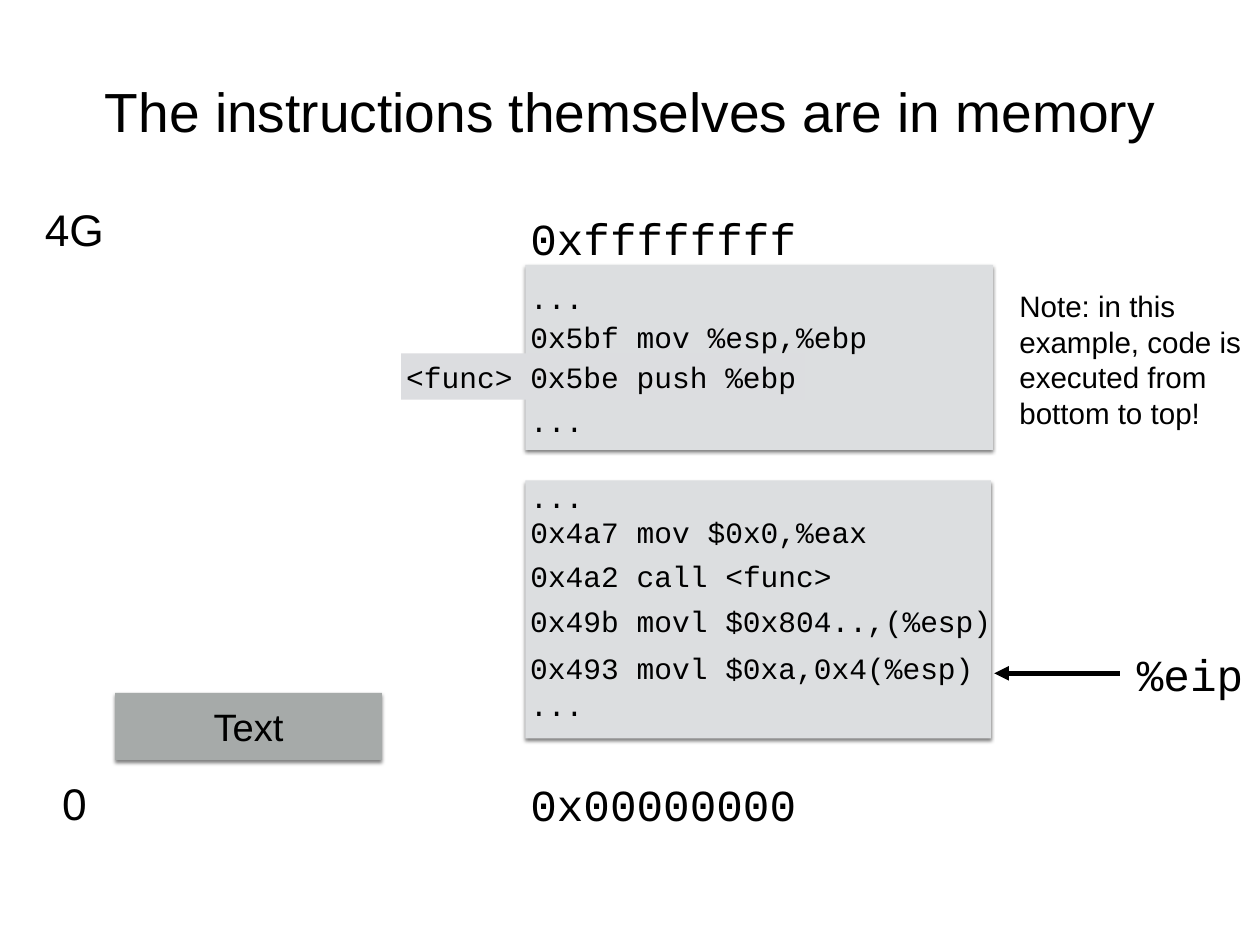
from pptx import Presentation
from pptx.dml.color import RGBColor as RGB
from pptx.enum.shapes import MSO_CONNECTOR as LINK, MSO_SHAPE as SHAPE
from pptx.enum.text import (MSO_ANCHOR as ANCHOR, MSO_AUTO_SIZE as FIT,
                            PP_ALIGN as ALIGN)
from pptx.oxml import parse_xml
from pptx.oxml.ns import nsdecls, qn
from pptx.util import Inches, Pt
from lxml.etree import SubElement

COLS, ROWS = 128, 96
WIDE, HIGH = Inches(14.22), Inches(10.67)
INK = {"text": "000000", "block": "DCDEE0", "func": "DCDDE0", "seg": "A6AAA9"}
SANS, MONO = "Arial", "Courier New"
PAD = Pt(4)
CODE = 53.37  # column where all code and addresses begin


def area(col, row, cols, rows):
    cell_w, cell_h = WIDE / COLS, HIGH / ROWS
    return [round(n) for n in
            (col * cell_w, row * cell_h, cols * cell_w, rows * cell_h)]


def write(shape, text, size, font, align=ALIGN.LEFT, pad=PAD, wrap=True,
          anchor=ANCHOR.MIDDLE):
    frame = shape.text_frame
    frame.text = text
    frame.word_wrap = wrap
    frame.auto_size = FIT.NONE if wrap else FIT.SHAPE_TO_FIT_TEXT
    frame.vertical_anchor = anchor
    frame.margin_left = frame.margin_right = pad
    frame.margin_top = frame.margin_bottom = pad
    for para in frame.paragraphs:
        para.alignment = align
        for run in para.runs:
            run.font.size = Pt(size)
            run.font.name = font
            run.font.color.rgb = RGB.from_string(INK["text"])


def add_box(slide, place, fill, shade=True):
    box = slide.shapes.add_shape(SHAPE.RECTANGLE, *area(*place))
    box.shadow.inherit = False
    box.fill.solid()
    box.fill.fore_color.rgb = RGB.from_string(INK[fill])
    box.line.fill.background()
    if shade:
        effects = box._element.spPr.find(qn("a:effectLst"))
        effects.append(parse_xml(
            f'<a:outerShdw {nsdecls("a")} blurRad="{Pt(3)}" dist="{Pt(2)}" '
            'dir="5400000" rotWithShape="0"><a:srgbClr val="000000">'
            '<a:alpha val="50000"/></a:srgbClr></a:outerShdw>'))
    return box


def add_text(slide, place, text, size, font, **style):
    box = slide.shapes.add_textbox(*area(*place))
    write(box, text, size, font, **style)


def mono_size(text, size):
    """Columns and rows that one line of fixed-width text takes up."""
    return len(text) * size * 0.075 + 1.1, size * 0.15 + 1


def add_code(slide, col, row, text, size=24):
    add_text(slide, (col, row, *mono_size(text, size)), text, size, MONO,
             wrap=False)


def add_block(slide, place, lines):
    add_box(slide, place, "block")
    for row, text in lines:
        add_code(slide, CODE, row, text)


def add_arrow(slide, start, end, row):
    x, y, span, _ = area(start, row, end - start, 0)
    arrow = slide.shapes.add_connector(LINK.STRAIGHT, x, y, x + span, y)
    arrow.line.width = Pt(4)
    arrow.line.color.rgb = RGB.from_string(INK["text"])
    SubElement(arrow.line._get_or_add_ln(), qn("a:headEnd"), type="triangle")
    SubElement(arrow._element.spPr, qn("a:effectLst"))


def main():
    deck = Presentation()
    deck.slide_width, deck.slide_height = WIDE, HIGH
    slide = deck.slides.add_slide(deck.slide_layouts[6])

    # Title
    add_text(slide, (9.4, 4.4, 109.2, 13.6),
             "The instructions themselves are in memory", 44.8, SANS,
             align=ALIGN.CENTER, pad=0)

    # Callee code, with its entry line marked
    add_block(slide, (CODE, 26.9, 47.5, 18.8), [
        (27.9, "..."), (31.95, "0x5bf mov %esp,%ebp"), (40.4, "...")])
    entry = "<func> 0x5be push %ebp"
    band = add_box(slide, (40.76, 35.9, 41, 4.7), "func", shade=False)
    write(band, entry, 24, MONO, wrap=False)

    # Caller code
    add_block(slide, (CODE, 48.8, 47.3, 26.2), [
        (48.2, "..."), (51.75, "0x4a7 mov $0x0,%eax"),
        (56.2, "0x4a2 call <func>"), (60.8, "0x49b movl $0x804..,(%esp)"),
        (65.5, "0x493 movl $0xa,0x4(%esp)"), (69.3, "...")])

    # Text segment
    seg = add_box(slide, (11.7, 70.4, 27.1, 6.8), "seg")
    write(seg, "Text", 31, SANS, align=ALIGN.CENTER, pad=0)

    # Ends of the address space
    for row, mark, drop, addr in ((20, "4G", 1, "0xffffffff"),
                                  (78.4, "0", 0.1, "0x00000000")):
        add_text(slide, (4, row, 7.1, 6.4), mark, 36, SANS,
                 align=ALIGN.CENTER, wrap=False)
        add_code(slide, CODE, row + drop, addr, 36)

    # Instruction pointer
    add_code(slide, 115, 65.2, "%eip", 36)
    add_arrow(slide, 101, 113.8, 68.4)

    # Note
    add_text(slide, (103.06, 28.8, 24.1, 15.6),
             "Note: in this\nexample, code is executed from bottom to top!",
             24, SANS, anchor=ANCHOR.TOP)

    deck.save("out.pptx")


if __name__ == "__main__":
    main()
